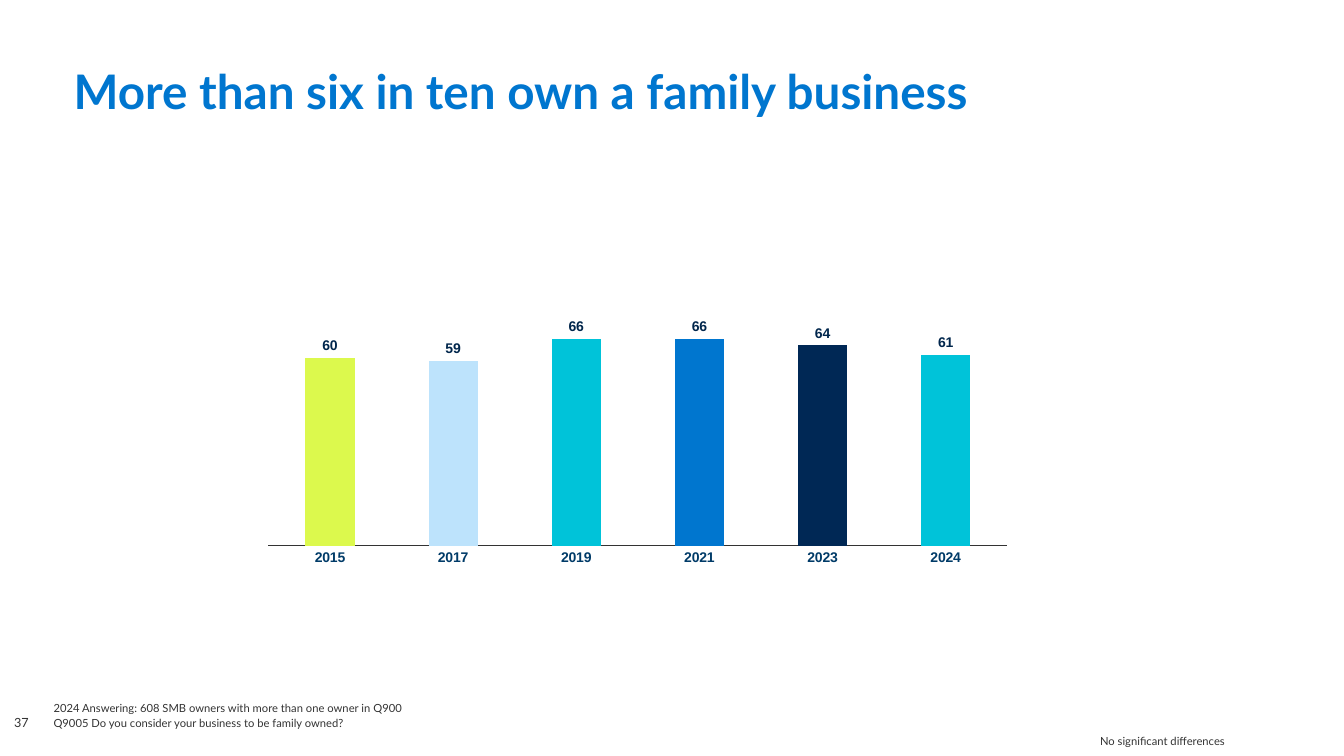
from dataclasses import dataclass

from pptx import Presentation
from pptx.chart.data import CategoryChartData
from pptx.dml.color import RGBColor
from pptx.enum.chart import XL_CHART_TYPE, XL_LABEL_POSITION, XL_TICK_MARK
from pptx.enum.text import MSO_ANCHOR, PP_ALIGN
from pptx.oxml import parse_xml
from pptx.oxml.ns import nsdecls
from pptx.util import Inches, Pt

COLUMN_CLUSTERED = XL_CHART_TYPE.COLUMN_CLUSTERED
OUTSIDE_END = XL_LABEL_POSITION.OUTSIDE_END
NO_TICKS = XL_TICK_MARK.NONE
BOTTOM, MIDDLE = MSO_ANCHOR.BOTTOM, MSO_ANCHOR.MIDDLE
LEFT = PP_ALIGN.LEFT

SLIDE_WIDTH, SLIDE_HEIGHT = Inches(13.33), Inches(7.5)
TEXT_FONT, CHART_FONT = "Lato", "Arial"
TEXT_COLOR, TITLE_COLOR = "333333", "0076CF"
YEAR_COLOR, VALUE_COLOR = "003B68", "00264C"
PLOT_AREA = {"x": 0.059, "y": 0.151, "w": 0.916, "h": 0.751}


@dataclass(frozen=True)
class Box:
    """A place on the slide, in percent of its width and height."""
    left: float
    top: float
    width: float
    height: float

    def lengths(self) -> tuple[int, int, int, int]:
        return (int(SLIDE_WIDTH * self.left / 100), int(SLIDE_HEIGHT * self.top / 100),
                int(SLIDE_WIDTH * self.width / 100), int(SLIDE_HEIGHT * self.height / 100))


@dataclass(frozen=True)
class Note:
    box: Box
    lines: tuple[str, ...]
    size: float = 8
    line_spacing: float = 0.9
    space_after: float = 2


@dataclass(frozen=True)
class Bar:
    year: str
    percent: int
    color: str


TITLE = "More than six in ten own a family business"
TITLE_BOX = Box(5.48, 6.8, 87.4, 10.4)
CHART_BOX = Box(16.43, 22.4, 60.02, 55.2)
NOTES = (
    Note(Box(1.05, 91.2, 2.93, 5.33), ("37",), size=9, line_spacing=1, space_after=0),
    Note(Box(3.98, 91.2, 91.45, 5.33),
         ("2024 Answering: 608 SMB owners with more than one owner in Q900",
          "Q9005 Do you consider your business to be family owned?")),
    Note(Box(81.85, 96.67, 17, 2.27), ("No significant differences",)),
)
BARS = (
    Bar("2015", 60, "DCF94D"),
    Bar("2017", 59, "BDE3FC"),
    Bar("2019", 66, "00C3D9"),
    Bar("2021", 66, "0076CF"),
    Bar("2023", 64, "002855"),
    Bar("2024", 61, "00C3D9"),
)


def rgb(color: str) -> RGBColor:
    return RGBColor.from_string(color)


def set_font(font, name: str, size: float, color: str, bold: bool = False) -> None:
    font.name, font.size, font.bold = name, Pt(size), bold
    font.color.rgb = rgb(color)


def set_frame(frame, anchor) -> None:
    frame.word_wrap = True
    frame.vertical_anchor = anchor
    frame.margin_left = frame.margin_top = frame.margin_right = frame.margin_bottom = 0


def add_title(slide) -> None:
    title = slide.shapes.title
    title.left, title.top, title.width, title.height = TITLE_BOX.lengths()
    title.text_frame.text = TITLE
    set_frame(title.text_frame, MIDDLE)
    paragraph = title.text_frame.paragraphs[0]
    paragraph.alignment = LEFT
    set_font(paragraph.font, TEXT_FONT, 34, TITLE_COLOR, bold=True)


def add_note(slide, note: Note) -> None:
    frame = slide.shapes.add_textbox(*note.box.lengths()).text_frame
    set_frame(frame, BOTTOM)
    frame.text = "\n".join(note.lines)
    for paragraph in frame.paragraphs:
        paragraph.line_spacing = note.line_spacing
        paragraph.space_after = Pt(note.space_after)
        set_font(paragraph.font, TEXT_FONT, note.size, TEXT_COLOR)


def place_plot_area(chart) -> None:
    """Fix the inner plot area as shares of the chart's size."""
    plot_area = chart.element.xpath("c:chart/c:plotArea")[0]
    for layout in plot_area.xpath("c:layout"):
        plot_area.remove(layout)
    modes = '<c:xMode val="edge"/><c:yMode val="edge"/>'
    shares = "".join(f'<c:{key} val="{share}"/>' for key, share in PLOT_AREA.items())
    plot_area.insert(0, parse_xml(
        f'<c:layout {nsdecls("c")}><c:manualLayout><c:layoutTarget val="inner"/>'
        f'{modes}{shares}</c:manualLayout></c:layout>'))


def add_bar_chart(slide) -> None:
    data = CategoryChartData()
    data.categories = [bar.year for bar in BARS]
    data.add_series("Series 1", [bar.percent for bar in BARS])
    chart = slide.shapes.add_chart(COLUMN_CLUSTERED, *CHART_BOX.lengths(), data).chart
    chart.has_legend = chart.has_title = False
    set_font(chart.font, CHART_FONT, 10, TEXT_COLOR)
    place_plot_area(chart)

    years = chart.category_axis
    years.major_tick_mark = years.minor_tick_mark = NO_TICKS
    years.format.line.color.rgb = rgb(TEXT_COLOR)
    years.format.line.width = Pt(0.75)
    set_font(years.tick_labels.font, CHART_FONT, 10, YEAR_COLOR, bold=True)

    percents = chart.value_axis
    percents.minimum_scale, percents.maximum_scale = 0, 100
    percents.major_unit = 1
    percents.has_major_gridlines = False
    percents.visible = False

    plot = chart.plots[0]
    plot.gap_width = 150
    plot.vary_by_categories = False
    series = plot.series[0]
    for index, bar in enumerate(BARS):
        fill = series.points[index].format.fill
        fill.solid()
        fill.fore_color.rgb = rgb(bar.color)
    labels = series.data_labels
    labels.show_value = True
    labels.position = OUTSIDE_END
    set_font(labels.font, CHART_FONT, 10, VALUE_COLOR, bold=True)


def main() -> None:
    presentation = Presentation()
    presentation.slide_width, presentation.slide_height = SLIDE_WIDTH, SLIDE_HEIGHT
    title_only = presentation.slide_layouts.get_by_name("Title Only")
    slide = presentation.slides.add_slide(title_only)
    add_title(slide)
    for note in NOTES:
        add_note(slide, note)
    add_bar_chart(slide)
    presentation.save("out.pptx")


if __name__ == "__main__":
    main()
